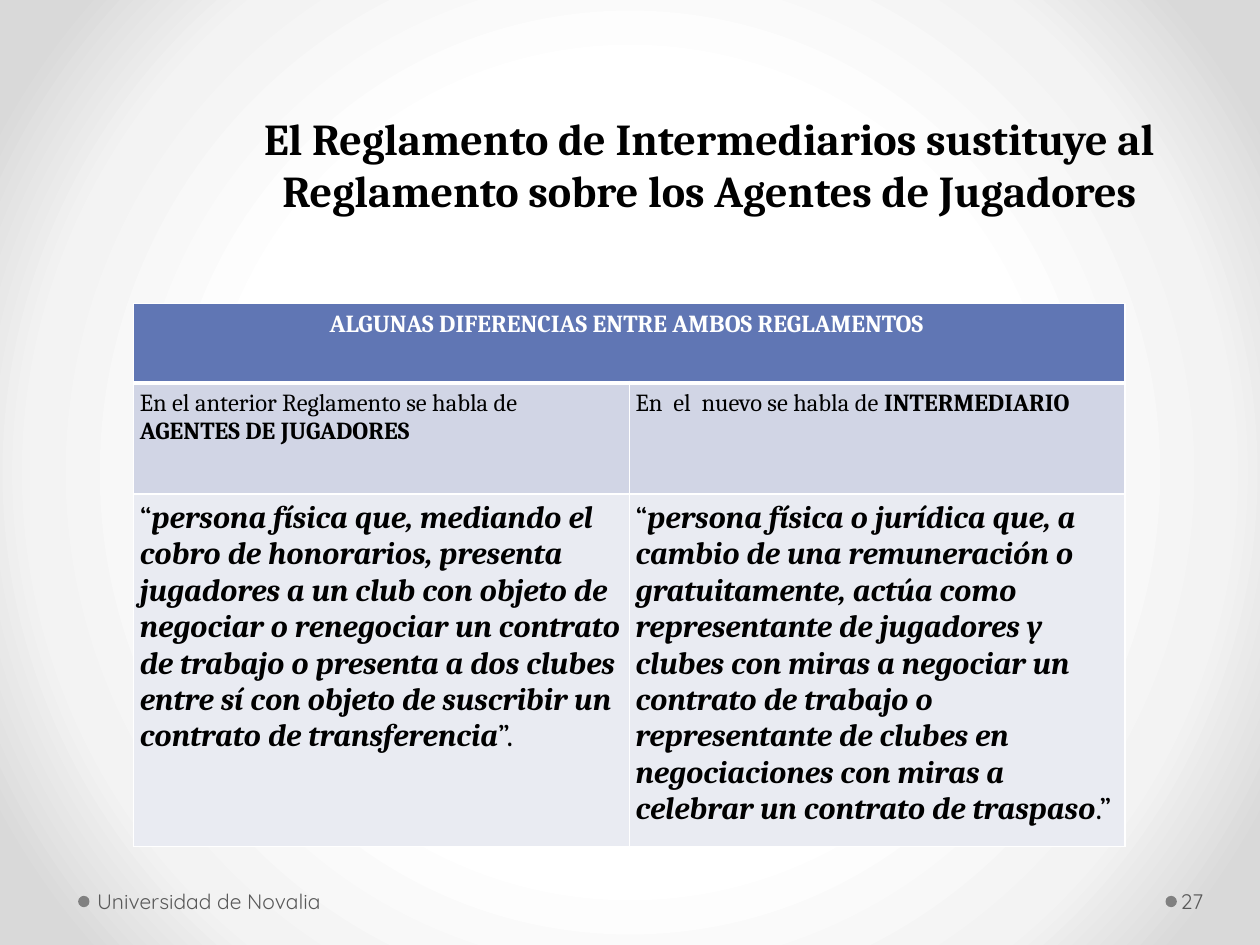
from dataclasses import dataclass

from lxml.etree import SubElement
from pptx import Presentation
from pptx.dml.color import RGBColor
from pptx.enum.shapes import MSO_SHAPE as Shape
from pptx.enum.text import MSO_ANCHOR as Anchor, PP_ALIGN as Align
from pptx.oxml import parse_xml
from pptx.oxml.ns import nsdecls, qn
from pptx.util import Inches, Pt


@dataclass(frozen=True)
class Theme:
    serif: str = "Cambria"
    sans: str = "Quicksand"
    black: str = "000000"
    white: str = "FFFFFF"
    footer: str = "595959"
    dot: str = "808080"
    header_fill: str = "6076B4"
    row_fills: tuple = ("D1D5E5", "E9EBF2")
    background: tuple = ((50, "FFFFFF"), (76, "F3F3F3"), (92, "D9D9D9"))
    title_size: float = 25.2
    label_size: float = 14
    quote_size: float = 18
    footer_size: float = 12


THEME = Theme()

HEADING = "ALGUNAS DIFERENCIAS ENTRE AMBOS REGLAMENTOS "
LABELS = (
    ("En el anterior Reglamento se habla de  ", "AGENTES DE JUGADORES"),
    ("En  el  nuevo se habla de ", "INTERMEDIARIO"),
)
QUOTES = (
    ("persona física que, mediando el cobro de honorarios, presenta jugadores "
     "a un club con objeto de negociar o renegociar un contrato de trabajo o "
     "presenta a dos clubes entre sí con objeto de suscribir un contrato de "
     "transferencia", "”."),
    ("persona física o jurídica que, a cambio de una remuneración o "
     "gratuitamente, actúa como representante de jugadores y clubes con miras "
     "a negociar un contrato de trabajo o representante de clubes en "
     "negociaciones con miras a celebrar un contrato de traspaso", ".”"),
)


def add_text(paragraph, text, size, font=THEME.serif, color=THEME.black,
             bold=False, italic=False, align=None):
    """Append a formatted run to a paragraph."""
    run = paragraph.add_run()
    run.text = text
    run.font.name = font
    run.font.size = Pt(size)
    run.font.bold = bold
    run.font.italic = italic
    run.font.color.rgb = RGBColor.from_string(color)
    if align is not None:
        paragraph.alignment = align


def add_text_box(slide, left, top, width, height, text, margin=0.05,
                 anchor=Anchor.MIDDLE, wrap=True, **text_format):
    box = slide.shapes.add_textbox(
        Inches(left), Inches(top), Inches(width), Inches(height))
    frame = box.text_frame
    frame.word_wrap = wrap
    frame.vertical_anchor = anchor
    frame.margin_left = frame.margin_right = Inches(margin)
    frame.margin_top = frame.margin_bottom = Inches(margin)
    add_text(frame.paragraphs[0], text, **text_format)


def add_dot(slide, left, top, size=0.09):
    dot = slide.shapes.add_shape(
        Shape.OVAL, Inches(left), Inches(top), Inches(size), Inches(size))
    dot.shadow.inherit = False
    dot.fill.solid()
    dot.fill.fore_color.rgb = RGBColor.from_string(THEME.dot)
    dot.line.fill.background()


def set_background(slide):
    """Radial gradient from the centre of the slide."""
    stops = "".join(
        f'<a:gs pos="{position * 1000}"><a:srgbClr val="{color}"/></a:gs>'
        for position, color in THEME.background)
    background = parse_xml(
        f'<p:bg {nsdecls("p", "a")}><p:bgPr><a:gradFill rotWithShape="1">'
        f'<a:gsLst>{stops}</a:gsLst><a:path path="circle">'
        '<a:fillToRect l="50000" t="50000" r="50000" b="50000"/></a:path>'
        '</a:gradFill><a:effectLst/></p:bgPr></p:bg>')
    slide.element.cSld.insert(0, background)


def style_cell(cell, fill, top=1, bottom=1):
    """Set margins, white borders (widths in points) and fill."""
    cell.margin_left = cell.margin_right = Inches(0.05)
    cell.margin_top = cell.margin_bottom = Inches(0.05)
    properties = cell._tc.get_or_add_tcPr()
    for side, width in (("L", 1), ("R", 1), ("T", top), ("B", bottom)):
        line = SubElement(properties, qn(f"a:ln{side}"), w=str(Pt(width)))
        line_fill = SubElement(line, qn("a:solidFill"))
        SubElement(line_fill, qn("a:srgbClr"), val=THEME.white)
    cell.fill.solid()
    cell.fill.fore_color.rgb = RGBColor.from_string(fill)


def add_comparison_table(slide):
    row_heights = (0.63, 0.88, 2.03)
    table = slide.shapes.add_table(
        3, 2, Inches(1.06), Inches(2.41), Inches(7.87),
        Inches(sum(row_heights))).table
    table.first_row = table.horz_banding = False
    for row, height in zip(table.rows, row_heights):
        row.height = Inches(height)

    # Heading across both columns, with a thick rule below
    for column in range(2):
        style_cell(table.cell(0, column), THEME.header_fill, bottom=3)
        style_cell(table.cell(1, column), THEME.row_fills[0], top=3)
        style_cell(table.cell(2, column), THEME.row_fills[1])
    heading = table.cell(0, 0)
    heading.merge(table.cell(0, 1))
    add_text(heading.text_frame.paragraphs[0], HEADING, THEME.label_size,
             color=THEME.white, bold=True, align=Align.CENTER)

    # One column per regulation: label, then definition
    for column, ((intro, name), (quote, ending)) in enumerate(
            zip(LABELS, QUOTES)):
        label = table.cell(1, column).text_frame.paragraphs[0]
        add_text(label, intro, THEME.label_size)
        add_text(label, name, THEME.label_size, bold=True)
        definition = table.cell(2, column).text_frame.paragraphs[0]
        add_text(definition, "“", THEME.quote_size)
        add_text(definition, quote, THEME.quote_size, bold=True, italic=True)
        add_text(definition, ending, THEME.quote_size)


def add_footer(slide):
    footer_format = dict(size=THEME.footer_size, font=THEME.sans,
                         color=THEME.footer)
    for left in (9.25, 0.62):
        add_dot(slide, left, 7.11)
    add_text_box(slide, 0.72, 7, 3.11, 0.31, "Universidad de Novalia",
                 **footer_format)
    add_text_box(slide, 9.34, 7.02, 0.26, 0.27, "27", margin=0.03, wrap=False,
                 **footer_format)


def main():
    presentation = Presentation()
    presentation.slide_width = Inches(10)
    presentation.slide_height = Inches(7.5)
    slide = presentation.slides.add_slide(presentation.slide_layouts[6])

    set_background(slide)
    add_footer(slide)
    add_text_box(slide, 1.77, 0.52, 7.72, 1.25,
                 "El Reglamento de Intermediarios sustituye al Reglamento "
                 "sobre los Agentes de Jugadores",
                 anchor=Anchor.BOTTOM, size=THEME.title_size, bold=True,
                 align=Align.CENTER)
    add_comparison_table(slide)
    presentation.save("out.pptx")


if __name__ == "__main__":
    main()
